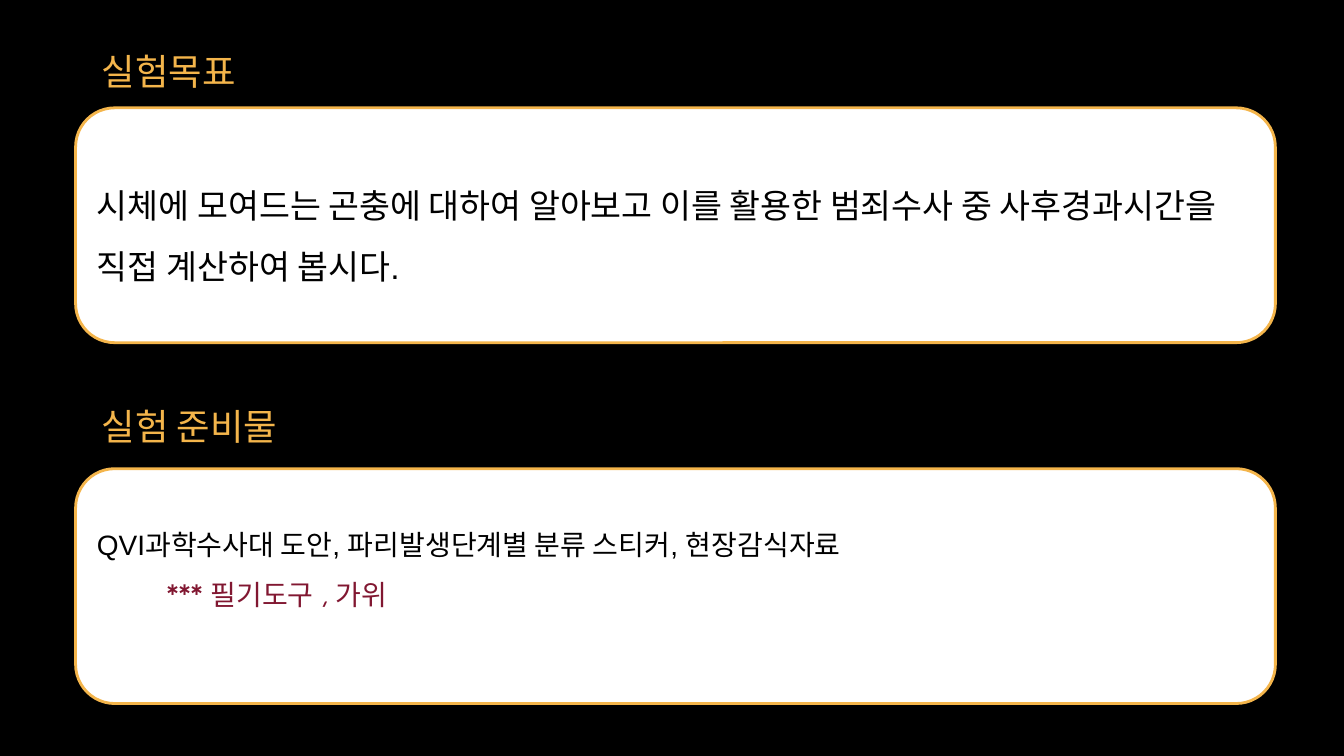
from pptx import Presentation
from pptx.dml.color import RGBColor
from pptx.enum.shapes import MSO_SHAPE
from pptx.enum.text import MSO_ANCHOR, MSO_AUTO_SIZE, PP_ALIGN
from pptx.util import Inches, Pt

ROUNDED = MSO_SHAPE.ROUNDED_RECTANGLE
TOP, MIDDLE = MSO_ANCHOR.TOP, MSO_ANCHOR.MIDDLE
LEFT = PP_ALIGN.LEFT
NO_AUTOFIT = MSO_AUTO_SIZE.NONE
GOLD, WHITE, BLACK, MAROON = "F4B54B", "FFFFFF", "000000", "811731"
SANS, DISPLAY = "Arial", "TeX Gyre Adventor"


def rgb(value):
    return RGBColor.from_string(value)


def write(p, text, size, font, color):
    p.text = text
    p.alignment = LEFT
    r = p.runs[0]
    r.font.size = Pt(size)
    r.font.name = font
    r.font.color.rgb = rgb(color)


prs = Presentation()
prs.slide_width, prs.slide_height = Inches(13.33), Inches(7.5)
s = prs.slides.add_slide(prs.slide_layouts[5])
s.background.fill.solid()
s.background.fill.fore_color.rgb = rgb(BLACK)

goal = [("시체에 모여드는 곤충에 대하여 알아보고 이를 활용한 범죄수사 중 사후경과시간을 직접 계산하여 봅시다.",
         24, SANS, BLACK, 0)]
materials = [
    ("QVI과학수사대 도안, 파리발생단계별 분류 스티커, 현장감식자료", 20, SANS, BLACK, 0),
    ("*** 필기도구 , 가위", 20, DISPLAY, MAROON, 0.69),
]
sections = [
    ("실험목표", 0.39, 1.96, 1.07, 0.05, goal),
    ("실험 준비물", 3.91, 2.3, 4.65, 0.55, materials),
]

for i, (heading, heading_top, heading_width, panel_top, bottom_inset, lines) in enumerate(sections):
    box = (Inches(0.91), Inches(heading_top), Inches(heading_width), Inches(0.48))
    if i == 0:
        sp = s.shapes.title
        sp.left, sp.top, sp.width, sp.height = box
    else:
        sp = s.shapes.add_textbox(*box)
    tf = sp.text_frame
    tf.word_wrap = True
    tf.auto_size = NO_AUTOFIT
    tf.vertical_anchor = TOP
    tf.margin_left = tf.margin_right = tf.margin_top = tf.margin_bottom = Inches(0.1)
    write(tf.paragraphs[0], heading, 26, DISPLAY, GOLD)

    panel = s.shapes.add_shape(ROUNDED, Inches(0.75), Inches(panel_top), Inches(11.9), Inches(2.33))
    panel.shadow.inherit = False
    panel.fill.solid()
    panel.fill.fore_color.rgb = rgb(WHITE)
    panel.line.color.rgb = rgb(GOLD)
    panel.line.width = Pt(2)
    tf = panel.text_frame
    tf.word_wrap = True
    tf.vertical_anchor = MIDDLE
    tf.margin_bottom = Inches(bottom_inset)
    for j, (text, size, font, color, indent) in enumerate(lines):
        p = tf.add_paragraph() if j else tf.paragraphs[0]
        write(p, text, size, font, color)
        p.line_spacing = 1.5
        if indent:
            pPr = p._p.get_or_add_pPr()
            pPr.set("marL", str(Inches(indent)))
            pPr.set("indent", "0")

prs.save("out.pptx")
